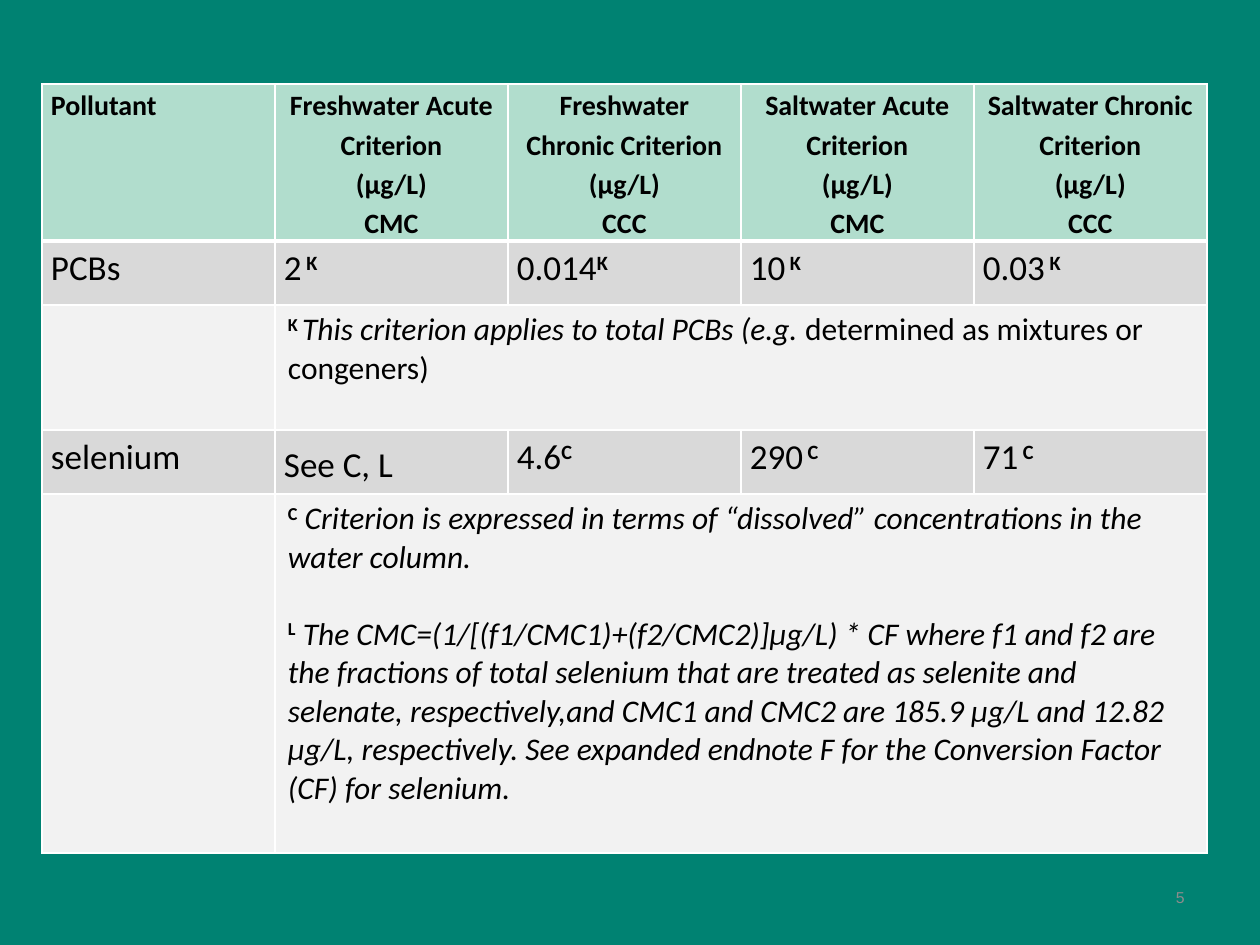
from dataclasses import dataclass
from typing import NamedTuple

from lxml.etree import SubElement
from pptx import Presentation
from pptx.dml.color import RGBColor
from pptx.enum.text import MSO_ANCHOR, PP_ALIGN
from pptx.oxml.ns import qn
from pptx.util import Pt

PX = 914400 // 126
TEAL = RGBColor(0x00, 0x82, 0x72)
MINT = RGBColor(0xB1, 0xDD, 0xCD)
GRAY = RGBColor(0xD9, 0xD9, 0xD9)
PALE = RGBColor(0xF2, 0xF2, 0xF2)
WHITE = RGBColor(0xFF, 0xFF, 0xFF)
BLACK = RGBColor(0x00, 0x00, 0x00)
DIM = RGBColor(0x8C, 0x8C, 0x8C)

LEFT, TOP, WIDTH = 42, 84, 233
HEIGHTS = [157, 64, 125, 64, 359]
COUNT = 5


class Run(NamedTuple):
    text: str
    bold: bool = False
    slant: bool = False
    sup: bool = False


@dataclass
class Look:
    fill: RGBColor
    size: int
    side: int = 9
    edge: int = 0
    lead: float = 1.15
    gap: int = 0


HEAD = Look(MINT, 16)
BODY = Look(GRAY, 20)
NOTE = Look(PALE, 18, 13, 6, 1.0, 22)


def mark(text: str) -> Run:
    return Run(text, bold=True, sup=True)


def value(text: str, sign: str) -> list[list[Run]]:
    return [[Run(text), mark(sign)]]


def title(water: str, code: str) -> list[list[Run]]:
    return [[Run(f"{water} Criterion\v(µg/L)", True)], [Run(code, True)]]


ROWS = [
    (HEAD, [[[Run("Pollutant", True)]], title("Freshwater Acute", "CMC"),
            title("Freshwater Chronic", "CCC"), title("Saltwater Acute", "CMC"),
            title("Saltwater Chronic", "CCC")]),
    (BODY, [[[Run("PCBs")]], value("2", " K"), value("0.014", "K"),
            value("10", " K"), value("0.03", " K")]),
    (NOTE, [[], [[mark("K "),
                  Run("This criterion applies to total PCBs (e.g.", slant=True),
                  Run(" determined as mixtures or congeners)")]]]),
    (BODY, [[[Run("selenium")]], [[Run("See C, L")]], value("4.6", "C"),
            value("290", " C"), value("71", " C")]),
    (NOTE, [[], [
        [mark("C"), Run(" Criterion is expressed in terms of “dissolved” "
                        "concentrations in the water column.", slant=True)],
        [mark("L"), Run(" The CMC=(1/[(f1/CMC1)+(f2/CMC2)]µg/L) * CF where f1 and "
                        "f2 are the fractions of total selenium that are treated as "
                        "selenite and selenate, respectively,and CMC1 and CMC2 are "
                        "185.9 μg/L and 12.82 μg/L, respectively. See expanded "
                        "endnote F for the Conversion Factor (CF) for selenium.",
                        slant=True)]]]),
]


def apply(item, form: dict) -> None:
    """Set each named attribute of an object."""
    for name, val in form.items():
        setattr(item, name, val)


def border(cell, row: int) -> None:
    """Line the four sides of a cell in white."""
    props = cell._tc.get_or_add_tcPr()
    for side in "LRTB":
        thick = (row, side) in ((0, "B"), (1, "T"))
        line = SubElement(props, qn(f"a:ln{side}"), w=str(Pt(3 if thick else 1)))
        fill = SubElement(line, qn("a:solidFill"))
        SubElement(fill, qn("a:srgbClr"), val=str(WHITE))


def write(frame, paras: list[list[Run]], look: Look, align: PP_ALIGN) -> None:
    """Fill a text frame with formatted runs."""
    for num, runs in enumerate(paras):
        para = frame.paragraphs[0] if num == 0 else frame.add_paragraph()
        apply(para, {"alignment": align, "line_spacing": look.lead,
                     "space_before": Pt(look.gap if num else 0)})
        for part in runs:
            for num_line, text in enumerate(part.text.split("\v")):
                if num_line:
                    para.add_line_break()
                run = para.add_run()
                run.text = text
                apply(run.font, {"name": "Calibri", "size": Pt(look.size),
                                 "bold": part.bold, "italic": part.slant})
                run.font.color.rgb = BLACK
                if part.sup:
                    run._r.get_or_add_rPr().set("baseline", "30000")


def draw_table(slide) -> None:
    """Draw the table of criteria with its notes."""
    table = slide.shapes.add_table(
        len(ROWS), COUNT, LEFT * PX, TOP * PX,
        COUNT * WIDTH * PX, sum(HEIGHTS) * PX).table
    for col in table.columns:
        col.width = WIDTH * PX
    for row, (look, cells) in enumerate(ROWS):
        table.rows[row].height = HEIGHTS[row] * PX
        for col in range(COUNT):
            cell = table.cell(row, col)
            border(cell, row)
            cell.fill.solid()
            cell.fill.fore_color.rgb = look.fill
            apply(cell, {"margin_left": look.side * PX, "margin_right": look.side * PX,
                         "margin_top": look.edge * PX, "margin_bottom": look.edge * PX})
        if look is NOTE:
            table.cell(row, 1).merge(table.cell(row, COUNT - 1))
        for col, paras in enumerate(cells):
            mid = look is HEAD and col > 0
            write(table.cell(row, col).text_frame, paras, look,
                  PP_ALIGN.CENTER if mid else PP_ALIGN.LEFT)
    table.cell(3, 1).vertical_anchor = MSO_ANCHOR.MIDDLE


def draw_number(slide) -> None:
    """Draw the slide number."""
    frame = slide.shapes.add_textbox(903 * PX, 872 * PX, 294 * PX, 50 * PX).text_frame
    apply(frame, {"word_wrap": True, "vertical_anchor": MSO_ANCHOR.MIDDLE})
    para = frame.paragraphs[0]
    para.alignment = PP_ALIGN.RIGHT
    run = para.add_run()
    run.text = "5"
    apply(run.font, {"name": "Arial", "size": Pt(9)})
    run.font.color.rgb = DIM


def main() -> None:
    """Build and save the slide."""
    deck = Presentation()
    apply(deck, {"slide_width": 1260 * PX, "slide_height": 945 * PX})
    slide = deck.slides.add_slide(deck.slide_layouts[6])
    slide.background.fill.solid()
    slide.background.fill.fore_color.rgb = TEAL
    draw_number(slide)
    draw_table(slide)
    deck.save("out.pptx")


if __name__ == "__main__":
    main()
